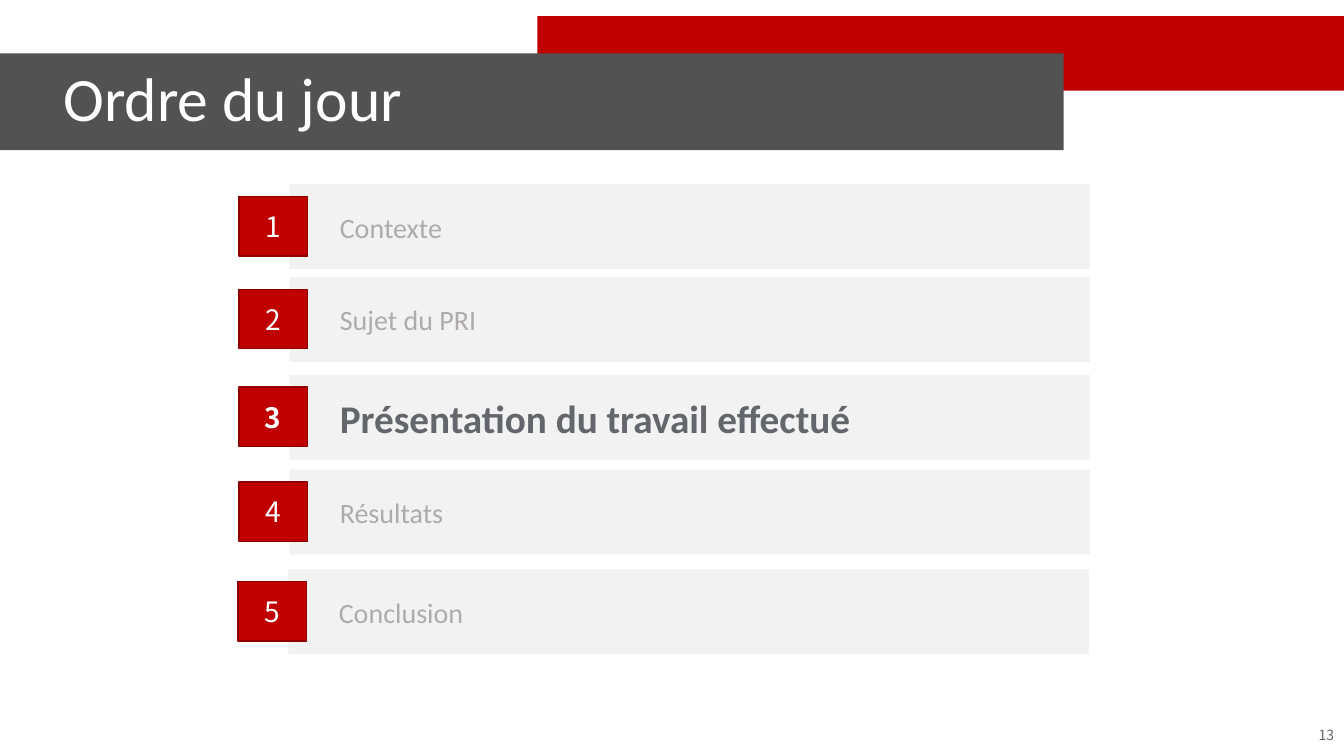
from pptx import Presentation
from pptx.dml.color import RGBColor
from pptx.enum.shapes import MSO_SHAPE as Shape
from pptx.enum.text import MSO_ANCHOR as Anchor, PP_ALIGN as Align
from pptx.util import Inches, Pt

RED = RGBColor(0xC0, 0x00, 0x00)
DARK_RED = RGBColor(0x8E, 0x00, 0x00)
CHARCOAL = RGBColor(0x52, 0x52, 0x52)
SLATE = RGBColor(0x63, 0x66, 0x6A)
MUTED = RGBColor(0xAF, 0xAB, 0xAB)
PALE = RGBColor(0xF2, 0xF2, 0xF2)
WHITE = RGBColor(0xFF, 0xFF, 0xFF)

BODY_FONT = "Calibri"
NUMBER_FONT = "Noto Sans CJK KR"

# Label, left edge and top edge of each agenda row
AGENDA = [
    ("Contexte", 2.37, 1.83),
    ("Sujet du PRI", 2.37, 2.75),
    ("Présentation du travail effectué", 2.37, 3.72),
    ("Résultats", 2.37, 4.66),
    ("Conclusion", 2.36, 5.65),
]
CURRENT = 3


def add_bar(shapes, left, top, width, height, fill, line=None):
    bar = shapes.add_shape(Shape.RECTANGLE, Inches(left), Inches(top),
                           Inches(width), Inches(height))
    bar.shadow.inherit = False
    bar.fill.solid()
    bar.fill.fore_color.rgb = fill
    if line is None:
        bar.line.fill.background()
    else:
        bar.line.color.rgb = line
        bar.line.width = Pt(1)
    return bar


def add_box(shapes, left, top, width, height):
    return shapes.add_textbox(Inches(left), Inches(top),
                              Inches(width), Inches(height))


def write(box, text, size, color, font, bold=False, align=Align.LEFT, inset=None):
    """Put one vertically centred line of text in the box."""
    frame = box.text_frame
    frame.word_wrap = True
    frame.vertical_anchor = Anchor.MIDDLE
    if inset is not None:
        frame.margin_left = frame.margin_right = Inches(inset)
        frame.margin_top = frame.margin_bottom = Inches(inset)
    para = frame.paragraphs[0]
    para.text = text
    para.alignment = align
    para.font.size = Pt(size)
    para.font.name = font
    para.font.bold = bold
    para.font.color.rgb = color
    return para


def add_header(page, title, left, top, width, height):
    add_bar(page.shapes, 5.33, 0.16, 8, 0.74, RED)
    add_bar(page.shapes, 0, 0.53, 10.55, 0.96, CHARCOAL)
    box = add_box(page.shapes, left, top, width, height)
    write(box, title, 44, WHITE, BODY_FONT).line_spacing = 0.9


def add_agenda_row(page, number, label, left, top):
    """Group the band, its label and the number badge; stress the current row."""
    current = number == CURRENT
    size, color, label_height = (28, SLATE, 0.55) if current else (20, MUTED, 0.42)
    band_height = 0.84
    shapes = page.shapes.add_group_shape().shapes
    add_bar(shapes, left + 0.5, top, 7.94, band_height, PALE)
    box = add_box(shapes, left + 0.96, top + (band_height - label_height) / 2,
                  7.21, label_height)
    write(box, label, size, color, BODY_FONT, current, inset=0.04)
    badge = add_bar(shapes, left, top + 0.12, 0.68, 0.59, RED, DARK_RED)
    write(badge, str(number), 20, WHITE, NUMBER_FONT, current, Align.CENTER, 0)


def add_page_number(page, number, left, top, width, height):
    box = add_box(page.shapes, left, top, width, height)
    write(box, str(number), 10, SLATE, NUMBER_FONT, align=Align.RIGHT)


def main():
    deck = Presentation()
    deck.slide_width, deck.slide_height = Inches(13.33), Inches(7.5)
    page = deck.slides.add_slide(deck.slide_layouts[6])
    add_header(page, "Ordre du jour", 0.53, 0.35, 10.03, 1.32)
    for number, (label, left, top) in enumerate(AGENDA, start=1):
        add_agenda_row(page, number, label, left, top)
    add_page_number(page, 13, 10.33, 7.09, 3, 0.4)
    deck.save("out.pptx")


if __name__ == "__main__":
    main()
